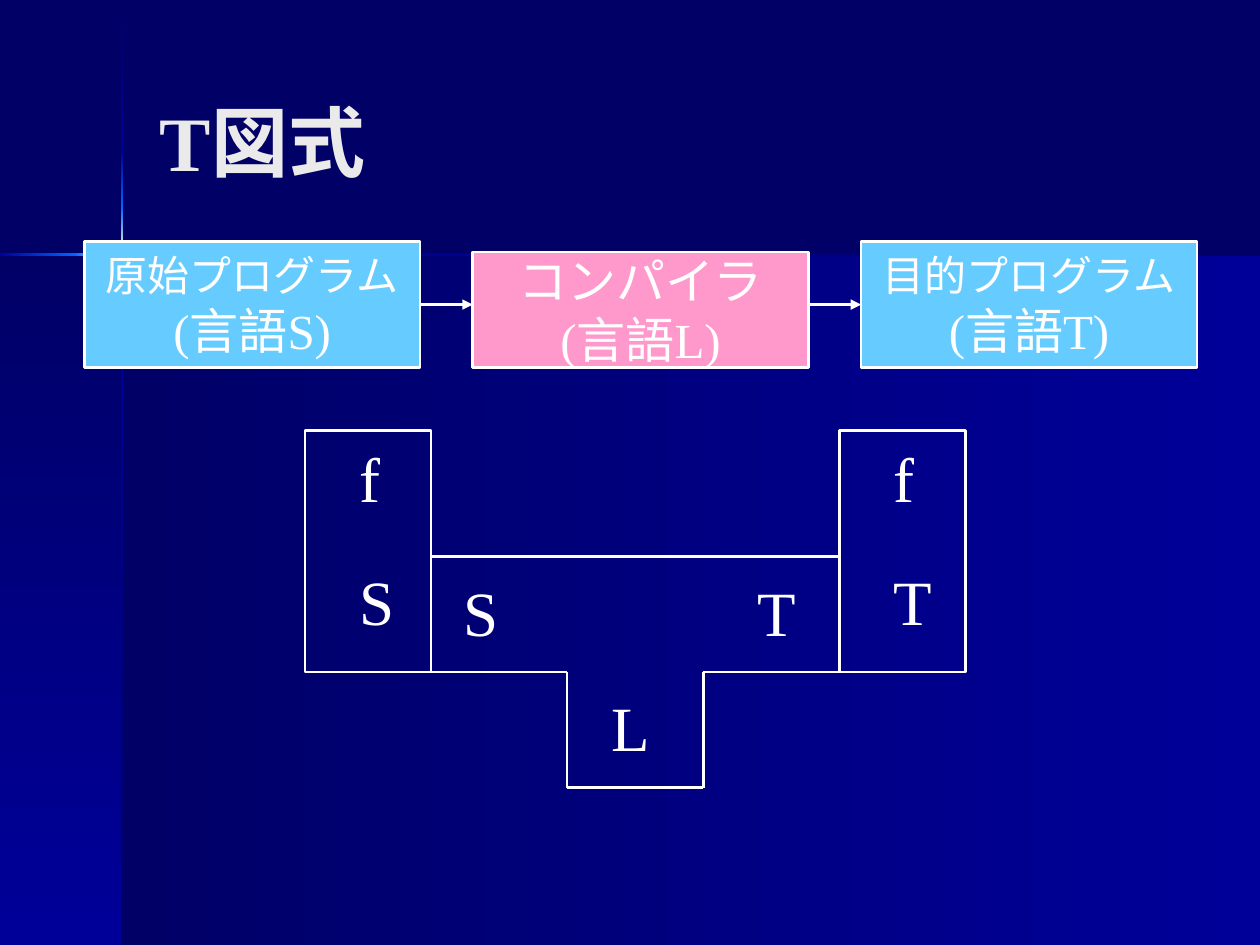
"""Build the T-diagram slide: a compiler pipeline above its T-shaped notation."""
from itertools import pairwise
from lxml.etree import SubElement as Sub
from pptx import Presentation
from pptx.dml.color import RGBColor
from pptx.enum.shapes import MSO_CONNECTOR as Link, MSO_SHAPE as Shape
from pptx.enum.text import MSO_ANCHOR as Anchor, MSO_AUTO_SIZE as Auto, PP_ALIGN as Align
from pptx.oxml.ns import qn
from pptx.util import Cm, Pt

NAVY = RGBColor(0x00, 0x00, 0x66)
BLUE = RGBColor(0x00, 0x00, 0x99)
AZURE = RGBColor(0x00, 0x66, 0xFF)
CREAM = RGBColor(0xFF, 0xFF, 0xCC)
WHITE = RGBColor(0xFF, 0xFF, 0xFF)
PALE = RGBColor(0xEA, 0xEA, 0xEA)
SKY = RGBColor(0x66, 0xCC, 0xFF)
PINK = RGBColor(0xFF, 0x99, 0xCC)
FONT = "Times New Roman"

TITLE = "T図式"
DOWN, ACROSS = 270, 0
THIN = 0.05
PANELS = [
    ((2.46, 5.13, 22.94, 13.92), ACROSS, (NAVY, BLUE)),
    ((0, 5.13, 2.46, 13.92), DOWN, (NAVY, BLUE)),
    ((2.44, 0.03, THIN, 3.05), DOWN, (NAVY, BLUE)),
    ((2.44, 7.16, THIN, 11.89), DOWN, (BLUE, NAVY)),
    ((4.5, 5.11, 20.9, THIN), ACROSS, (BLUE, NAVY)),
    ((2.44, 3.07, THIN, 1.12), DOWN, (BLUE, AZURE)),
    ((2.44, 4.19, THIN, 1.85), DOWN, (AZURE, CREAM, AZURE)),
    ((0, 5.11, 1.55, THIN), ACROSS, (BLUE, AZURE)),
    ((1.52, 5.11, 1.85, THIN), ACROSS, (AZURE, CREAM, AZURE)),
]
STEPS = [
    (4.87, SKY, [("原始プログラム", 24), ("(言語S)", 28)]),
    (5.08, PINK, [("コンパイラ", 28), ("(言語L)", 28)]),
    (4.87, SKY, [("目的プログラム", 24), ("(言語T)", 28)]),
]
STEP_X, STEP_GAP, STEP_W, STEP_END = 1.7, 7.83, 6.77, 7.41
FLOW_Y = 6.14
XS = (8.69, 11.43, 14.18, 16.93)
YS = (11.22, 13.55, 15.88)
TEE = [(0, 0), (3, 0), (3, 1), (2, 1), (2, 2), (1, 2), (1, 1), (0, 1), (0, 0)]
MARKS = [("S", 9.1, 11.43), ("T", 15.03, 11.43), ("L", 12.07, 13.76)]
SIDE_W, SIDE_Y = 2.54, 8.68
SIDES = [(XS[0] - SIDE_W, "S"), (XS[3], "T")]
WIDTHS = {"f": 0.91, "S": 1.22, "T": 1.27, "L": 1.27}


def write(para, text, size, color=WHITE):
    run = para.add_run()
    run.text = text
    font = run.font
    font.name, font.size, font.color.rgb = FONT, Pt(size), color
    return font


def add_box(slide, area, color=None):
    box = slide.shapes.add_shape(Shape.RECTANGLE, *map(Cm, area))
    box.shadow.inherit = False
    if color is None:
        box.fill.background()
    else:
        box.fill.solid()
        box.fill.fore_color.rgb = color
    box.line.color.rgb, box.line.width = WHITE, Pt(1.5)
    return box


def add_panel(slide, area, angle, colors):
    panel = slide.shapes.add_shape(Shape.RECTANGLE, *map(Cm, area))
    panel.shadow.inherit = False
    panel.line.fill.background()
    panel.fill.gradient()
    panel.fill.gradient_angle = angle
    stops = panel._element.spPr.find(".//" + qn("a:gsLst"))
    for old in list(stops):
        stops.remove(old)
    for i, color in enumerate(colors):
        stop = Sub(stops, qn("a:gs"), pos=str(100000 * i // (len(colors) - 1)))
        Sub(stop, qn("a:srgbClr"), val=str(color))


def add_line(slide, start, end, arrow=False):
    line = slide.shapes.add_connector(Link.STRAIGHT, *map(Cm, start + end))
    line.line.color.rgb, line.line.width = WHITE, Pt(1.5)
    if arrow:
        Sub(line.line._get_or_add_ln(), qn("a:tailEnd"), type="triangle")
    Sub(line._element.spPr, qn("a:effectLst"))
    return line


def add_mark(slide, text, x, y):
    mark = slide.shapes.add_textbox(Cm(x), Cm(y), Cm(WIDTHS[text]), Cm(1.78))
    frame = mark.text_frame
    frame.word_wrap, frame.auto_size = False, Auto.SHAPE_TO_FIT_TEXT
    write(frame.paragraphs[0], text, 36)


def add_step(slide, x, y, color, lines):
    box = add_box(slide, (x, y, STEP_W, STEP_END - y), color)
    frame = box.text_frame
    frame.word_wrap, frame.vertical_anchor = False, Anchor.MIDDLE
    for i, (text, size) in enumerate(lines):
        para = frame.add_paragraph() if i else frame.paragraphs[0]
        para.alignment = Align.CENTER
        write(para, text, size)
    return box


def add_title(slide):
    title = slide.shapes.title
    slide.shapes._spTree.append(title._element)
    title.left, title.top, title.width, title.height = map(Cm, (2.97, 0.84, 20.95, 3.99))
    title.text_frame.vertical_anchor = Anchor.MIDDLE
    para = title.text_frame.paragraphs[0]
    para.alignment = Align.LEFT
    write(para, TITLE, 44, PALE).bold = True


def main():
    deck = Presentation()
    deck.slide_width, deck.slide_height = Cm(25.4), Cm(19.05)
    slide = deck.slides.add_slide(deck.slide_layouts[5])
    back = slide.background.fill
    back.solid()
    back.fore_color.rgb = NAVY
    for panel in PANELS:
        add_panel(slide, *panel)
    add_title(slide)

    for (a, b), (c, d) in pairwise(TEE):
        add_line(slide, (XS[a], YS[b]), (XS[c], YS[d]))
    for mark in MARKS:
        add_mark(slide, *mark)

    lefts = [STEP_X + i * STEP_GAP for i in range(len(STEPS))]
    boxes = [add_step(slide, x, *step) for x, step in zip(lefts, STEPS)]
    flows = [add_line(slide, (a + STEP_W, FLOW_Y), (b, FLOW_Y), True)
             for a, b in pairwise(lefts)]
    flows[0].begin_connect(boxes[0], 3)
    flows[1].end_connect(boxes[2], 1)

    for x, name in SIDES:
        add_box(slide, (x, SIDE_Y, SIDE_W, YS[1] - SIDE_Y))
        add_mark(slide, "f", x + 0.84, SIDE_Y + 0.06)
        add_mark(slide, name, x + 0.84, YS[0])
    deck.save("out.pptx")


if __name__ == "__main__":
    main()
